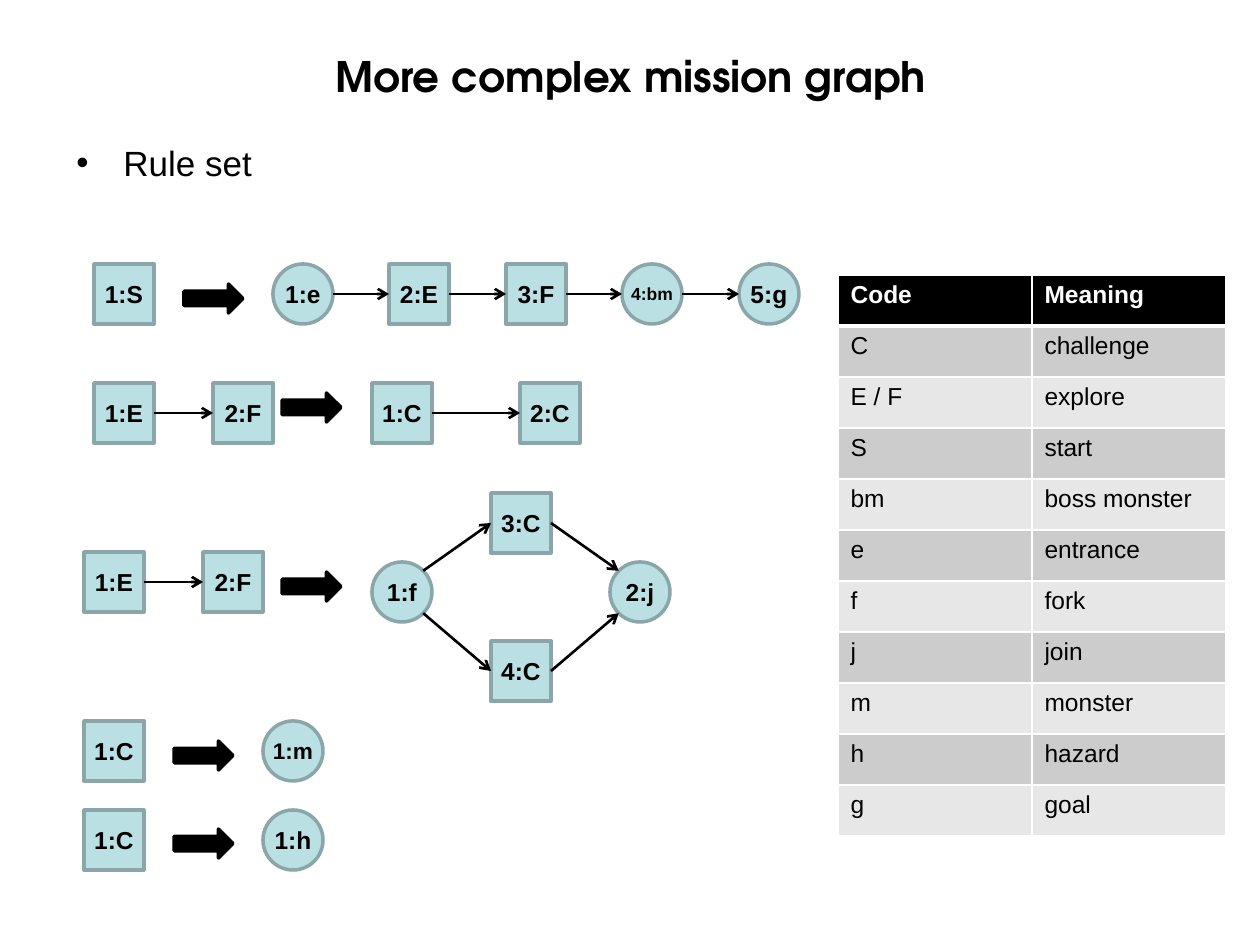
import math

import lxml.etree
import pptx
import pptx.dml.color
import pptx.enum.shapes
import pptx.enum.text
import pptx.oxml
import pptx.oxml.ns
import pptx.util

PX = 914400 / 126
NODE = 60
COLORS = {
    "ink": "000000", "paper": "FFFFFF", "node": "BBE0E3", "node_edge": "8AA6A8",
    "band_dark": "CCCCCC", "band_light": "E7E7E7",
}
SHAPES = pptx.enum.shapes.MSO_SHAPE
ANCHOR = pptx.enum.text.MSO_ANCHOR
ALIGN = pptx.enum.text.PP_ALIGN
qn = pptx.oxml.ns.qn


def emu(*lengths):
    return [pptx.util.Emu(round(length * PX)) for length in lengths]


def write(frame, text, size, color="ink", bold=False, font="Arial", align=ALIGN.LEFT):
    paragraph = frame.paragraphs[0]
    paragraph.alignment = align
    run = paragraph.add_run()
    run.text = text
    run.font.size = pptx.util.Pt(size)
    run.font.name = font
    run.font.bold = bold
    run.font.color.rgb = pptx.dml.color.RGBColor.from_string(COLORS[color])
    return paragraph


deck = pptx.Presentation()
deck.slide_width, deck.slide_height = emu(1260, 945)
slide = deck.slides.add_slide(deck.slide_layouts[6])

title = slide.shapes.add_textbox(*emu(64, 37, 1134, 77)).text_frame
title.word_wrap = True
title.vertical_anchor = ANCHOR.MIDDLE
write(title, "More complex mission graph", 24, bold=True,
      font="TeX Gyre Adventor", align=ALIGN.CENTER)

heading = slide.shapes.add_textbox(*emu(64, 135, 1134, 100)).text_frame
heading.word_wrap = True
rule_set = write(heading, "Rule set", 20)
rule_set.space_before = pptx.util.Pt(4)
bullet_format = rule_set._p.get_or_add_pPr()
indent = emu(47)[0]
bullet_format.set("marL", str(indent))
bullet_format.set("indent", str(-indent))
lxml.etree.SubElement(bullet_format, qn("a:buFont")).set("typeface", "Arial")
lxml.etree.SubElement(bullet_format, qn("a:buChar")).set("char", "•")

terminals = {"1:e", "4:bm", "5:g", "1:f", "2:j", "1:m", "1:h"}
small_labels = {"4:bm": 10, "1:m": 12.9}
rules = {
    1: [("1:S", 94, 264), ("1:e", 273, 264), ("2:E", 389, 264),
        ("3:F", 506, 264), ("4:bm", 622, 264), ("5:g", 739, 264)],
    2: [("1:E", 94, 383), ("2:F", 213, 383), ("1:C", 372, 383), ("2:C", 520, 383)],
    3: [("1:E", 84, 552), ("2:F", 203, 552), ("1:f", 372, 562),
        ("3:C", 491, 493), ("4:C", 491, 641), ("2:j", 610, 562)],
    4: [("1:C", 84, 721), ("1:m", 263, 721)],
    5: [("1:C", 84, 810), ("1:h", 263, 810)],
}
nodes = {}
for rule, members in rules.items():
    for label, left, top in members:
        outline = SHAPES.OVAL if label in terminals else SHAPES.RECTANGLE
        node = slide.shapes.add_shape(outline, *emu(left, top, NODE, NODE))
        node.shadow.inherit = False
        node.fill.solid()
        node.fill.fore_color.rgb = pptx.dml.color.RGBColor.from_string(COLORS["node"])
        node.line.color.rgb = pptx.dml.color.RGBColor.from_string(COLORS["node_edge"])
        node.line.width = pptx.util.Pt(2)
        frame = node.text_frame
        frame.margin_left = frame.margin_right = frame.margin_top = frame.margin_bottom = 0
        frame.vertical_anchor = ANCHOR.MIDDLE
        frame.word_wrap = False
        write(frame, label, small_labels.get(label, 14), bold=True, align=ALIGN.CENTER)
        nodes[rule, label] = (node, left + NODE / 2, top + NODE / 2)

for left, top in [(184, 284), (282, 393), (282, 572), (174, 741), (174, 829)]:
    rewrite_arrow = slide.shapes.add_shape(SHAPES.RIGHT_ARROW, *emu(left, top, 59, 29))
    rewrite_arrow.shadow.inherit = False
    rewrite_arrow.fill.solid()
    rewrite_arrow.fill.fore_color.rgb = pptx.dml.color.RGBColor.from_string(COLORS["ink"])
    rewrite_arrow.line.color.rgb = pptx.dml.color.RGBColor.from_string(COLORS["ink"])
    rewrite_arrow.line.width = pptx.util.Pt(2)

links = [
    (1, "1:e", "2:E"), (1, "2:E", "3:F"), (1, "3:F", "4:bm"), (1, "4:bm", "5:g"),
    (2, "1:E", "2:F"), (2, "1:C", "2:C"), (3, "1:E", "2:F"),
    (3, "1:f", "3:C"), (3, "1:f", "4:C"), (3, "3:C", "2:j"), (3, "4:C", "2:j"),
]
for rule, source, target in links:
    source_node, source_x, source_y = nodes[rule, source]
    target_node, target_x, target_y = nodes[rule, target]
    slope = (target_y > source_y) - (target_y < source_y)
    ends = []
    for label, x, y, side in [(source, source_x, source_y, 1), (target, target_x, target_y, -1)]:
        angle = math.pi / 4 * slope if label in terminals else 0
        ends += [x + side * NODE / 2 * math.cos(angle), y + side * NODE / 2 * math.sin(angle)]
    link = slide.shapes.add_connector(pptx.enum.shapes.MSO_CONNECTOR.STRAIGHT, *emu(*ends))
    if source not in terminals:
        link.begin_connect(source_node, 3)
    if target not in terminals:
        link.end_connect(target_node, 1)
    link.line.color.rgb = pptx.dml.color.RGBColor.from_string(COLORS["ink"])
    link.line.width = pptx.util.Pt(1.5)
    lxml.etree.SubElement(link.line._get_or_add_ln(), qn("a:tailEnd")).set("type", "arrow")
    lxml.etree.SubElement(link._element.spPr, qn("a:effectLst"))

legend = [
    ("Code", "Meaning"), ("C", "challenge"), ("E / F", "explore"), ("S", "start"),
    ("bm", "boss monster"), ("e", "entrance"), ("f", "fork"), ("j", "join"),
    ("m", "monster"), ("h", "hazard"), ("g", "goal"),
]
codes = slide.shapes.add_table(len(legend), 2, *emu(838, 275, 388, 51 * len(legend))).table
for row, entry in enumerate(legend):
    header = row == 0
    band = "ink" if header else "band_dark" if row % 2 else "band_light"
    widths = {"L": 1, "R": 1, "T": 3 if row == 1 else 1, "B": 3 if header else 1}
    for column, text in enumerate(entry):
        cell = codes.cell(row, column)
        write(cell.text_frame, text, 14, "paper" if header else "ink", header)
        cell_format = cell._tc.get_or_add_tcPr()
        for side, width in widths.items():
            border = lxml.etree.SubElement(cell_format, qn(f"a:ln{side}"))
            border.set("w", str(pptx.util.Pt(width)))
            paint = lxml.etree.SubElement(border, qn("a:solidFill"))
            lxml.etree.SubElement(paint, qn("a:srgbClr")).set("val", COLORS["paper"])
        cell.fill.solid()
        cell.fill.fore_color.rgb = pptx.dml.color.RGBColor.from_string(COLORS[band])

deck.save("out.pptx")
